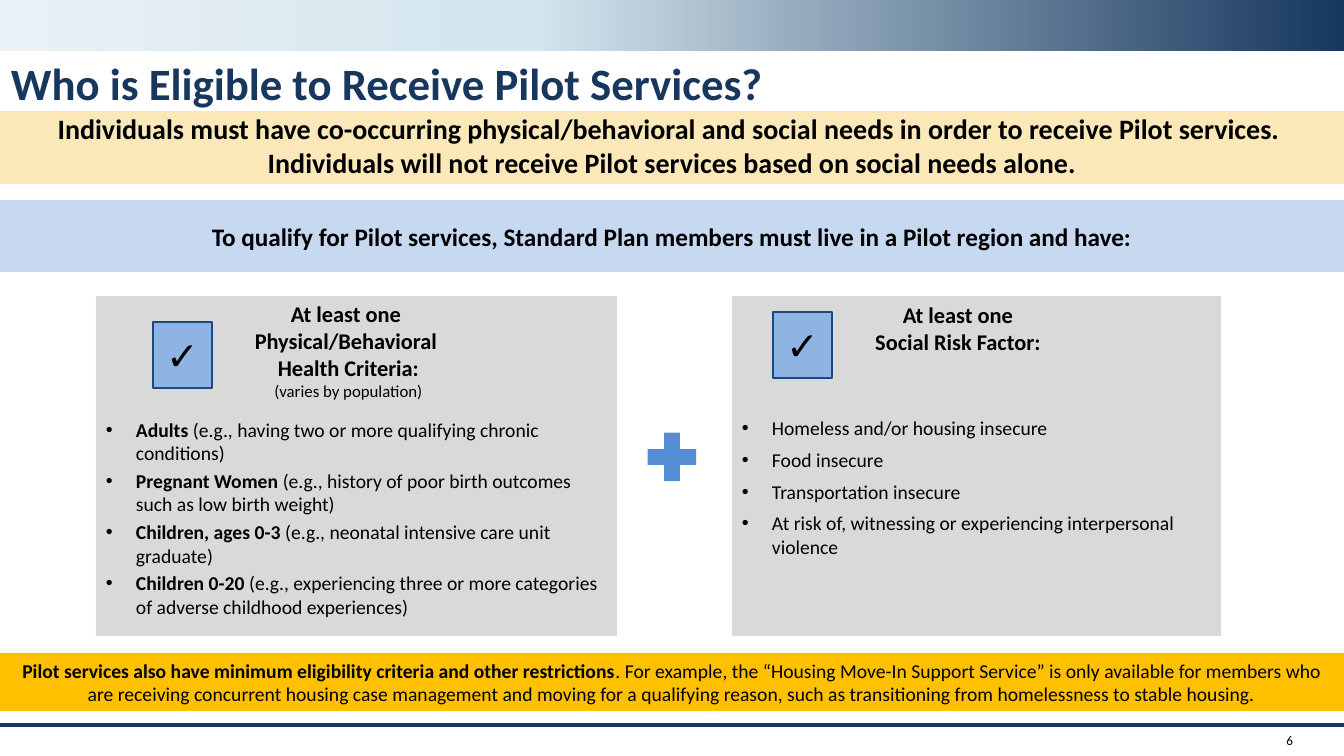
from dataclasses import dataclass, field

from lxml import etree
from pptx import Presentation
from pptx.dml.color import RGBColor
from pptx.enum.shapes import MSO_CONNECTOR, MSO_SHAPE
from pptx.enum.text import MSO_ANCHOR, PP_ALIGN
from pptx.oxml.ns import qn
from pptx.util import Pt

RECTANGLE, PLUS = MSO_SHAPE.RECTANGLE, MSO_SHAPE.MATH_PLUS
STRAIGHT = MSO_CONNECTOR.STRAIGHT
TOP, MIDDLE = MSO_ANCHOR.TOP, MSO_ANCHOR.MIDDLE
LEFT, CENTER, RIGHT = PP_ALIGN.LEFT, PP_ALIGN.CENTER, PP_ALIGN.RIGHT

WIDTH, HEIGHT = 1344, 756
EMU_PER_PX = 12192000 / WIDTH
HANGING = 30


@dataclass(frozen=True)
class Theme:
    font: str = "Calibri"
    navy: str = "17375E"
    ink: str = "000000"
    cream: str = "FAE8B8"
    pale_blue: str = "C6D9F1"
    plus_blue: str = "558ED5"
    check_blue: str = "8EB4E3"
    check_edge: str = "1F497D"
    card_grey: str = "D9D9D9"
    amber: str = "FFC000"
    header_stops: tuple = ((0, "17375E"), (60, "D3E4ED"), (100, "E9F1F6"))
    title_size: float = 32
    check_size: float = 28
    lead_size: float = 20
    qualify_size: float = 18
    heading_size: float = 16
    body_size: float = 14
    note_size: float = 12
    number_size: float = 9.4


THEME = Theme()


@dataclass(frozen=True)
class Box:
    left: int
    top: int
    width: int
    height: int


@dataclass(frozen=True)
class Run:
    text: str
    size: float
    bold: bool = False
    color: str = THEME.ink


@dataclass(frozen=True)
class Para:
    runs: list[Run]
    formats: dict = field(default_factory=lambda: {"alignment": CENTER})
    bullet_margin: int = 0


@dataclass(frozen=True)
class Card:
    panel: Box
    text: Box
    check: Box
    paragraphs: list[Para]


@dataclass(frozen=True)
class Band:
    box: Box
    color: str
    runs: list[Run]
    insets: tuple = (10, 5, 10, 5)


def px(value: float) -> int:
    return round(value * EMU_PER_PX)


def place(box: Box) -> list[int]:
    return [px(value) for value in (box.left, box.top, box.width, box.height)]


def add_block(slide, box: Box, color: str, kind=RECTANGLE, edge: str = ""):
    shape = slide.shapes.add_shape(kind, *place(box))
    shape.shadow.inherit = False
    shape.fill.solid()
    shape.fill.fore_color.rgb = RGBColor.from_string(color)
    if edge:
        shape.line.color.rgb = RGBColor.from_string(edge)
        shape.line.width = Pt(1)
    else:
        shape.line.fill.background()
    return shape


def add_bullet(paragraph, margin: int) -> None:
    properties = paragraph._p.get_or_add_pPr()
    properties.set("marL", str(px(margin)))
    properties.set("indent", str(-px(HANGING)))
    etree.SubElement(properties, qn("a:buFont"), typeface="Arial")
    etree.SubElement(properties, qn("a:buChar"), char="•")


def write(shape, paragraphs: list[Para], anchor=TOP, insets=(10, 5, 10, 5)) -> None:
    frame = shape.text_frame
    sides = ("margin_left", "margin_top", "margin_right", "margin_bottom")
    settings = dict(zip(sides, map(px, insets)), word_wrap=True, vertical_anchor=anchor)
    for name, value in settings.items():
        setattr(frame, name, value)
    for index, item in enumerate(paragraphs):
        paragraph = frame.add_paragraph() if index else frame.paragraphs[0]
        for name, value in item.formats.items():
            setattr(paragraph, name, value)
        if item.bullet_margin:
            add_bullet(paragraph, item.bullet_margin)
        for part in item.runs:
            for line_index, line in enumerate(part.text.split("\n")):
                if line_index:
                    paragraph.add_line_break()
                if not line:
                    continue
                run = paragraph.add_run()
                run.text = line
                formats = {"name": THEME.font, "size": Pt(part.size), "bold": part.bold}
                for name, value in formats.items():
                    setattr(run.font, name, value)
                run.font.color.rgb = RGBColor.from_string(part.color)


def add_text(slide, box: Box, paragraphs: list[Para], **options) -> None:
    write(slide.shapes.add_textbox(*place(box)), paragraphs, **options)


def add_header(slide) -> None:
    header = add_block(slide, Box(0, 0, WIDTH, 51), THEME.navy)
    header.fill.gradient()
    header.fill.gradient_angle = 180
    stops = header._element.spPr.find(".//" + qn("a:gsLst"))
    stops.clear()
    for position, color in THEME.header_stops:
        stop = etree.SubElement(stops, qn("a:gs"), pos=str(position * 1000))
        etree.SubElement(stop, qn("a:srgbClr"), val=color)


def add_footer_rule(slide) -> None:
    rule = slide.shapes.add_connector(STRAIGHT, 0, px(725), px(WIDTH), px(725))
    rule.line.color.rgb = RGBColor.from_string(THEME.navy)
    rule.line.width = Pt(2.25)
    etree.SubElement(rule._element.spPr, qn("a:effectLst"))


def add_card(slide, card: Card) -> None:
    add_block(slide, card.panel, THEME.card_grey)
    add_text(slide, card.text, card.paragraphs)
    check = add_block(slide, card.check, THEME.check_blue, edge=THEME.check_edge)
    write(check, [Para([Run("✓", THEME.check_size, True)])], MIDDLE)


def heading(text: str, gap: float = 0, note: str = "") -> Para:
    runs = [Run(text, THEME.heading_size, True)]
    if note:
        runs.append(Run(note, THEME.note_size))
    return Para(runs, {"alignment": CENTER, "space_after": Pt(gap)})


def bullet(label: str, detail: str, margin: int, gap: float) -> Para:
    runs = [Run(label, THEME.body_size, True)] if label else []
    runs.append(Run(detail, THEME.body_size))
    return Para(runs, {"alignment": LEFT, "space_after": Pt(gap)}, margin)


POPULATIONS = [
    ("Adults", " (e.g., having two or more qualifying chronic conditions)"),
    ("Pregnant Women ", "(e.g., history of poor birth outcomes such as low birth weight)"),
    ("Children, ages 0-3 ", "(e.g., neonatal intensive care unit graduate)"),
    ("Children 0-20 ", "(e.g., experiencing three or more categories of adverse childhood experiences)"),
]
RISKS = ["Homeless and/or housing insecure", "Food insecure", "Transportation insecure",
         "At risk of, witnessing or experiencing interpersonal violence"]
CARDS = [
    Card(Box(732, 296, 489, 340), Box(732, 296, 457, 270), Box(773, 312, 59, 66),
         [heading("At least one "), heading("Social Risk Factor: ", 44)]
         + [bullet("", risk, HANGING, 5.8) for risk in RISKS]),
    Card(Box(96, 296, 521, 340), Box(78, 295, 541, 339), Box(153, 322, 59, 66),
         [heading("At least one \nPhysical/Behavioral "),
          heading("Health Criteria:\n", 12, "(varies by population)")]
         + [bullet(label, detail, 48, 3) for label, detail in POPULATIONS]),
]
BANDS = [
    Band(Box(0, 111, WIDTH, 73), THEME.cream, [Run(
        "Individuals must have co-occurring physical/behavioral and social needs in order to receive "
        "Pilot services. \nIndividuals will not receive Pilot services based on social needs alone.",
        THEME.lead_size, True)], (10, 3, 10, 7)),
    Band(Box(0, 200, WIDTH, 72), THEME.pale_blue, [Run(
        "To qualify for Pilot services, Standard Plan members must live in a Pilot region and have:",
        THEME.qualify_size, True)]),
    Band(Box(0, 653, WIDTH, 58), THEME.amber, [
        Run("Pilot services also have minimum eligibility criteria and other restrictions",
            THEME.body_size, True),
        Run(". For example, the “Housing Move-In Support Service” is only available for members who are "
            "receiving concurrent housing case management and moving for a qualifying reason, such as "
            "transitioning from homelessness to stable housing.", THEME.body_size)]),
]


def main() -> None:
    presentation = Presentation()
    presentation.slide_width, presentation.slide_height = px(WIDTH), px(HEIGHT)
    slide = presentation.slides.add_slide(presentation.slide_layouts[6])

    # Header, title and footer rule
    add_header(slide)
    add_footer_rule(slide)
    title = Run("Who is Eligible to Receive Pilot Services?", THEME.title_size, True, THEME.navy)
    add_text(slide, Box(0, 56, WIDTH, 60), [Para([title], {"alignment": LEFT, "line_spacing": 0.9})],
             anchor=MIDDLE, insets=(11, 6, 11, 6))

    # Full-width statements
    for band in BANDS:
        write(add_block(slide, band.box, band.color), [Para(band.runs)], MIDDLE, band.insets)

    # Criteria cards joined by a plus
    add_block(slide, Box(639, 424, 66, 66), THEME.plus_blue, PLUS)
    for card in CARDS:
        add_card(slide, card)

    # Slide number
    add_text(slide, Box(1221, 725, 83, 31), [Para([Run("6", THEME.number_size)], {"alignment": RIGHT})],
             anchor=MIDDLE, insets=(11, 6, 11, 6))
    presentation.save("out.pptx")


if __name__ == "__main__":
    main()
